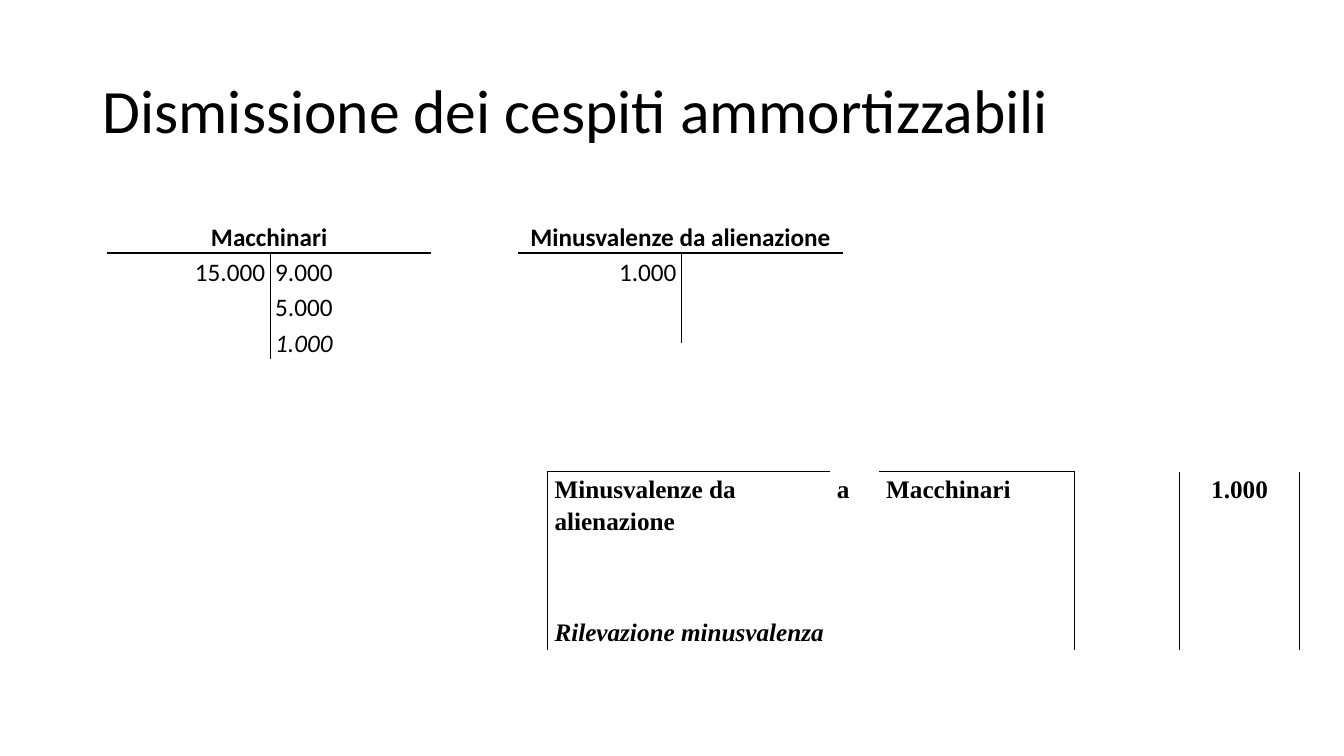
"""Build the slide on the disposal of depreciable assets, with ledger accounts and a journal entry."""
from dataclasses import dataclass

from lxml import etree
from pptx import Presentation
from pptx.dml.color import RGBColor
from pptx.enum.text import MSO_ANCHOR, PP_ALIGN
from pptx.oxml.ns import qn
from pptx.util import Inches, Pt

LEFT, CENTER, RIGHT = PP_ALIGN.LEFT, PP_ALIGN.CENTER, PP_ALIGN.RIGHT
MIDDLE = MSO_ANCHOR.MIDDLE
BLACK = "000000"
BORDER_TAGS = {"l": "a:lnL", "r": "a:lnR", "t": "a:lnT", "b": "a:lnB"}
PLAIN_TABLE = {"first_row": False, "horz_banding": False}


@dataclass(frozen=True)
class Entry:
    """Content and format of one cell; borders holds letters from l, r, t, b."""
    lines: tuple[str, ...] = ()
    borders: str = ""
    align: PP_ALIGN = LEFT
    bold: bool = False
    italic_last: bool = False
    span: int = 1


@dataclass(frozen=True)
class Ledger:
    """Place, grid and entries of one table."""
    left: float
    top: float
    columns: tuple[float, ...]
    rows: tuple[float, ...]
    entries: tuple[tuple[Entry, ...], ...]
    font: str
    inset: float


def color(value: str) -> RGBColor:
    """Turn a hex string into a colour."""
    return RGBColor.from_string(value)


def add_run(paragraph, text: str, font: str, size: float,
            bold: bool = False, italic: bool = False) -> None:
    """Add a formatted black run."""
    run = paragraph.add_run()
    run.text = text
    formats = {"name": font, "size": Pt(size), "bold": bold, "italic": italic}
    for name, value in formats.items():
        setattr(run.font, name, value)
    run.font.color.rgb = color(BLACK)


def set_borders(cell, sides: str) -> None:
    """Draw the named sides of a cell and clear the others."""
    properties = cell._tc.get_or_add_tcPr()
    for position, (side, tag) in enumerate(BORDER_TAGS.items()):
        line = etree.Element(qn(tag), w=str(Pt(1)))
        if side in sides:
            fill = etree.SubElement(line, qn("a:solidFill"))
            etree.SubElement(fill, qn("a:srgbClr"), val=BLACK)
        else:
            etree.SubElement(line, qn("a:noFill"))
        properties.insert(position, line)


def fill_cell(cell, entry: Entry, font: str, inset: float) -> None:
    """Write an entry into its cell."""
    margins = {"margin_left": inset, "margin_right": inset,
               "margin_top": 0, "margin_bottom": 0}
    for name, value in margins.items():
        setattr(cell, name, Inches(value))
    cell.fill.background()
    set_borders(cell, entry.borders)
    for index, text in enumerate(entry.lines):
        frame = cell.text_frame
        paragraph = frame.add_paragraph() if index else frame.paragraphs[0]
        paragraph.alignment = entry.align
        paragraph.line_spacing = 1.15
        last = index == len(entry.lines) - 1
        add_run(paragraph, text, font, 18, entry.bold, entry.italic_last and last)


def add_ledger(slide, ledger: Ledger) -> None:
    """Add one table with its entries."""
    table = slide.shapes.add_table(
        len(ledger.rows), len(ledger.columns), Inches(ledger.left), Inches(ledger.top),
        Inches(sum(ledger.columns)), Inches(sum(ledger.rows))).table
    for name, value in PLAIN_TABLE.items():
        setattr(table, name, value)
    for column, width in zip(table.columns, ledger.columns):
        column.width = Inches(width)
    for row, height in zip(table.rows, ledger.rows):
        row.height = Inches(height)
    for r, entries in enumerate(ledger.entries):
        for c, entry in enumerate(entries):
            cell = table.cell(r, c)
            fill_cell(cell, entry, ledger.font, ledger.inset)
            if entry.span > 1:
                cell.merge(table.cell(r, c + entry.span - 1))


def t_account(left: float, name: str, debit: str, credits: tuple[str, ...],
              height: float) -> Ledger:
    """Describe a T-account."""
    return Ledger(left, 2.16, (1.62, 1.6), (0.35, height), (
        (Entry((name,), "b", CENTER, bold=True, span=2), Entry(borders="b")),
        (Entry((debit,), "tr", RIGHT), Entry(credits, "tl", italic_last=True)),
    ), "Calibri", 0.05)


def journal_row(text: tuple[str, ...] = ()) -> tuple[Entry, ...]:
    """Describe a journal row whose first three columns are joined."""
    return (Entry(text, "lr", bold=True, italic_last=True, span=3), Entry(),
            Entry(borders="r"), Entry(borders="lr"), Entry(borders="lr"))


JOURNAL = Ledger(5.43, 4.68, (2.8, 0.49, 1.94, 1.04, 1.19), (1.1, 0.32, 0.33), (
    (Entry(("Minusvalenze da alienazione",), "lt", bold=True),
     Entry(("a",), bold=True),
     Entry(("Macchinari",), "tr", bold=True),
     Entry(borders="lr"),
     Entry(("1.000",), "lr", CENTER, bold=True)),
    journal_row(),
    journal_row(("Rilevazione minusvalenza",)),
), "Times New Roman", 0.07)

LEDGERS = (
    t_account(1.06, "Macchinari", "15.000", ("9.000", "5.000", "1.000"), 1.05),
    t_account(5.14, "Minusvalenze da alienazione", "1.000", (), 0.89),
    JOURNAL,
)


def add_title(slide, text: str) -> None:
    """Add the slide title."""
    title = slide.shapes.add_textbox(Inches(0.92), Inches(0.4), Inches(11.5), Inches(1.45))
    frame = title.text_frame
    for name, value in {"word_wrap": True, "vertical_anchor": MIDDLE}.items():
        setattr(frame, name, value)
    paragraph = frame.paragraphs[0]
    paragraph.line_spacing = 0.9
    add_run(paragraph, text, "Calibri", 44)


def main() -> None:
    """Build and save the presentation."""
    presentation = Presentation()
    presentation.slide_width = Inches(13.33)
    presentation.slide_height = Inches(7.5)
    slide = presentation.slides.add_slide(presentation.slide_layouts[6])
    add_title(slide, "Dismissione dei cespiti ammortizzabili")
    for ledger in LEDGERS:
        add_ledger(slide, ledger)
    presentation.save("out.pptx")


if __name__ == "__main__":
    main()
